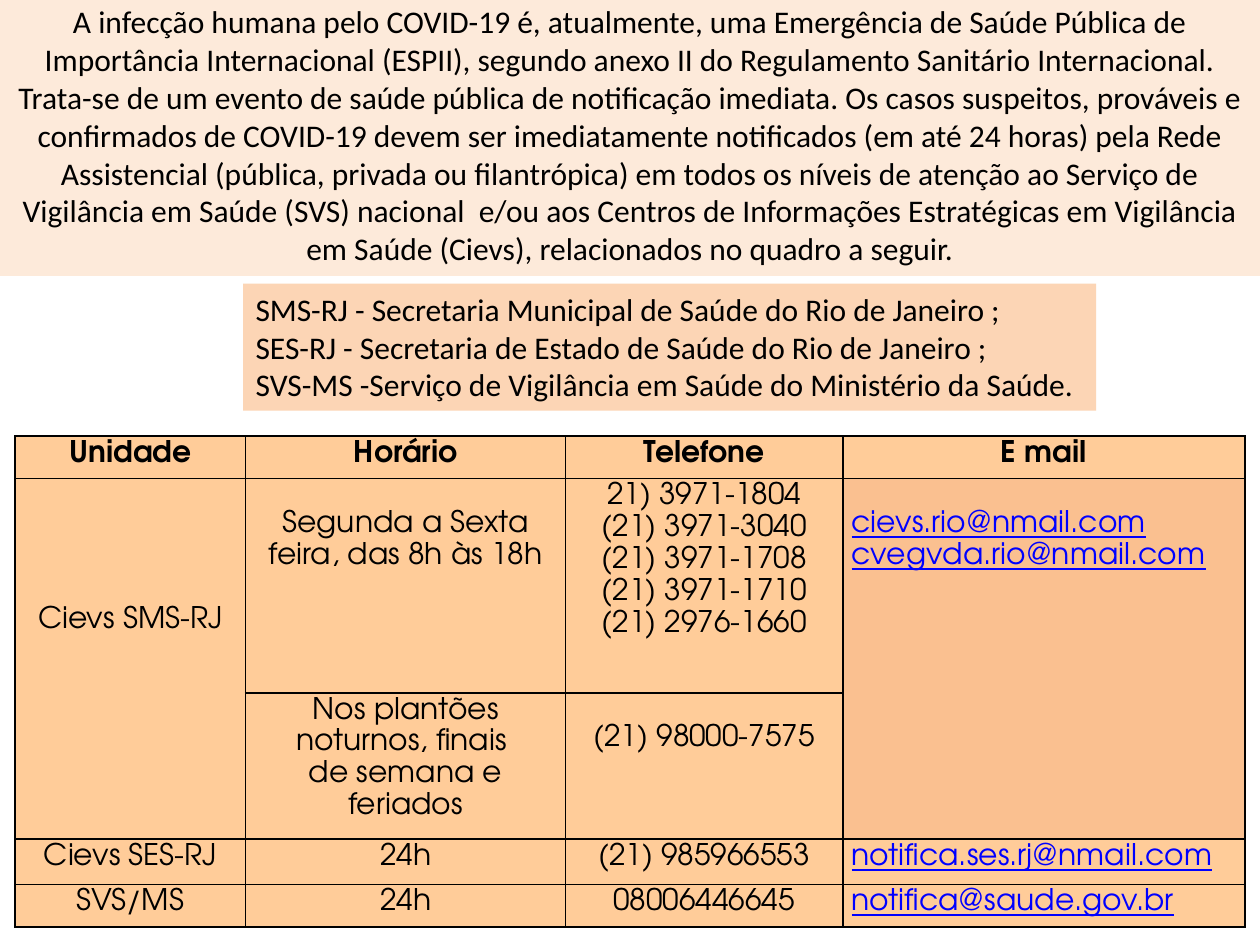
from lxml import etree
from pptx import Presentation
from pptx.dml.color import RGBColor as RGB
from pptx.enum.shapes import MSO_SHAPE as SHAPE
from pptx.enum.text import MSO_ANCHOR as ANCHOR, PP_ALIGN as ALIGN
from pptx.oxml import parse_xml
from pptx.util import Inches, Pt

BLACK = RGB(0x00, 0x00, 0x00)
BLUE = RGB(0x00, 0x00, 0xFF)
PALE = RGB(0xFD, 0xEA, 0xDA)
PEACH = RGB(0xFC, 0xD5, 0xB5)
SAND = RGB(0xFF, 0xCC, 0x99)
CORAL = RGB(0xFA, 0xC0, 0x90)
NS = "http://schemas.openxmlformats.org/drawingml/2006/main"

INTRO = (
    "A infecção humana pelo COVID-19 é, atualmente, uma Emergência de Saúde Pública de "
    "Importância Internacional (ESPII), segundo anexo II do Regulamento Sanitário Internacional. "
    "Trata-se de um evento de saúde pública de notificação imediata. Os casos suspeitos, prováveis e "
    "confirmados de COVID-19 devem ser imediatamente notificados (em até 24 horas) pela Rede "
    "Assistencial (pública, privada ou filantrópica) em todos os níveis de atenção ao Serviço de "
    "Vigilância em Saúde (SVS) nacional  e/ou aos Centros de Informações Estratégicas em Vigilância "
    "em Saúde (Cievs), relacionados no quadro a seguir."
)
UNITS = (
    "SMS-RJ - Secretaria Municipal de Saúde do Rio de Janeiro ;\n"
    "SES-RJ - Secretaria de Estado de Saúde do Rio de Janeiro ;\n"
    "SVS-MS -Serviço de Vigilância em Saúde do Ministério da Saúde."
)
PHONES = "21) 3971-1804\n(21) 3971-3040\n(21) 3971-1708\n(21) 3971-1710\n(21) 2976-1660"
ROWS = [
    ["Unidade", "Horário", "Telefone", "E mail"],
    ["Cievs SMS-RJ", "Segunda a Sexta feira, das 8h às 18h", PHONES,
     "cievs.rio@nmail.com\ncvegvda.rio@nmail.com"],
    ["", "Nos plantões noturnos, finais \nde semana e feriados", "(21) 98000-7575", ""],
    ["Cievs SES-RJ", "24h", "(21) 985966553", "notifica.ses.rj@nmail.com"],
    ["SVS/MS", "24h", "08006446645", "notifica@saude.gov.br"],
]
WIDTHS = [1.83, 2.54, 2.2, 3.19]
HEIGHTS = [0.34, 1.7, 1.16, 0.36, 0.34]
TOPS = {(1, 0): 0.98, (1, 1): 0.22, (1, 3): 0.22, (2, 2): 0.22}


def style(frame, face, size, align, color=BLACK, bold=False, link=False):
    for para in frame.paragraphs:
        para.alignment = align
        for run in para.runs:
            font = run.font
            font.name, font.size = face, Pt(size)
            font.bold, font.underline = bold, link
            font.color.rgb = color


def border(cell):
    props = cell._tc.get_or_add_tcPr()
    for i, side in enumerate(["lnL", "lnR", "lnT", "lnB"]):
        props.insert(i, parse_xml(
            f'<a:{side} xmlns:a="{NS}" w="12700"><a:solidFill>'
            f'<a:srgbClr val="000000"/></a:solidFill></a:{side}>'))


prs = Presentation()
prs.slide_width, prs.slide_height = Inches(10), Inches(7.5)
slide = prs.slides.add_slide(prs.slide_layouts[6])

grid = slide.shapes.add_table(
    len(ROWS), len(WIDTHS), Inches(0.12), Inches(3.46),
    Inches(sum(WIDTHS)), Inches(sum(HEIGHTS))).table
for col, width in zip(grid.columns, WIDTHS):
    col.width = Inches(width)
for row, height in zip(grid.rows, HEIGHTS):
    row.height = Inches(height)
for c in (0, 3):
    grid.cell(1, c).merge(grid.cell(2, c))

for r, row in enumerate(ROWS):
    for c, text in enumerate(row):
        cell = grid.cell(r, c)
        cell.margin_left = cell.margin_right = Inches(0.07)
        cell.margin_top = Inches(TOPS.get((r, c), 0))
        cell.margin_bottom = 0
        cell.vertical_anchor = ANCHOR.TOP
        cell.fill.solid()
        cell.fill.fore_color.rgb = CORAL if c == 3 and r in (1, 2) else SAND
        border(cell)
        if not text:
            continue
        cell.text_frame.text = text
        link = c == 3 and r > 0
        style(cell.text_frame, "TeX Gyre Adventor", 17,
              ALIGN.LEFT if link else ALIGN.CENTER,
              BLUE if link else BLACK, r == 0, link)
        for para in cell.text_frame.paragraphs:
            para.line_spacing = 1.15

BOXES = [
    (0, -0.03, 10, 2.22, PALE, INTRO, ALIGN.CENTER),
    (1.93, 2.25, 6.77, 1.01, PEACH, UNITS, ALIGN.LEFT),
]
for x, y, w, h, fill, text, align in BOXES:
    box = slide.shapes.add_shape(
        SHAPE.RECTANGLE, Inches(x), Inches(y), Inches(w), Inches(h))
    box.shadow.inherit = False
    box.fill.solid()
    box.fill.fore_color.rgb = fill
    box.line.fill.background()
    frame = box.text_frame
    frame.word_wrap = True
    frame.vertical_anchor = ANCHOR.TOP
    frame.text = text
    style(frame, "Calibri", 18, align)

prs.save("out.pptx")
